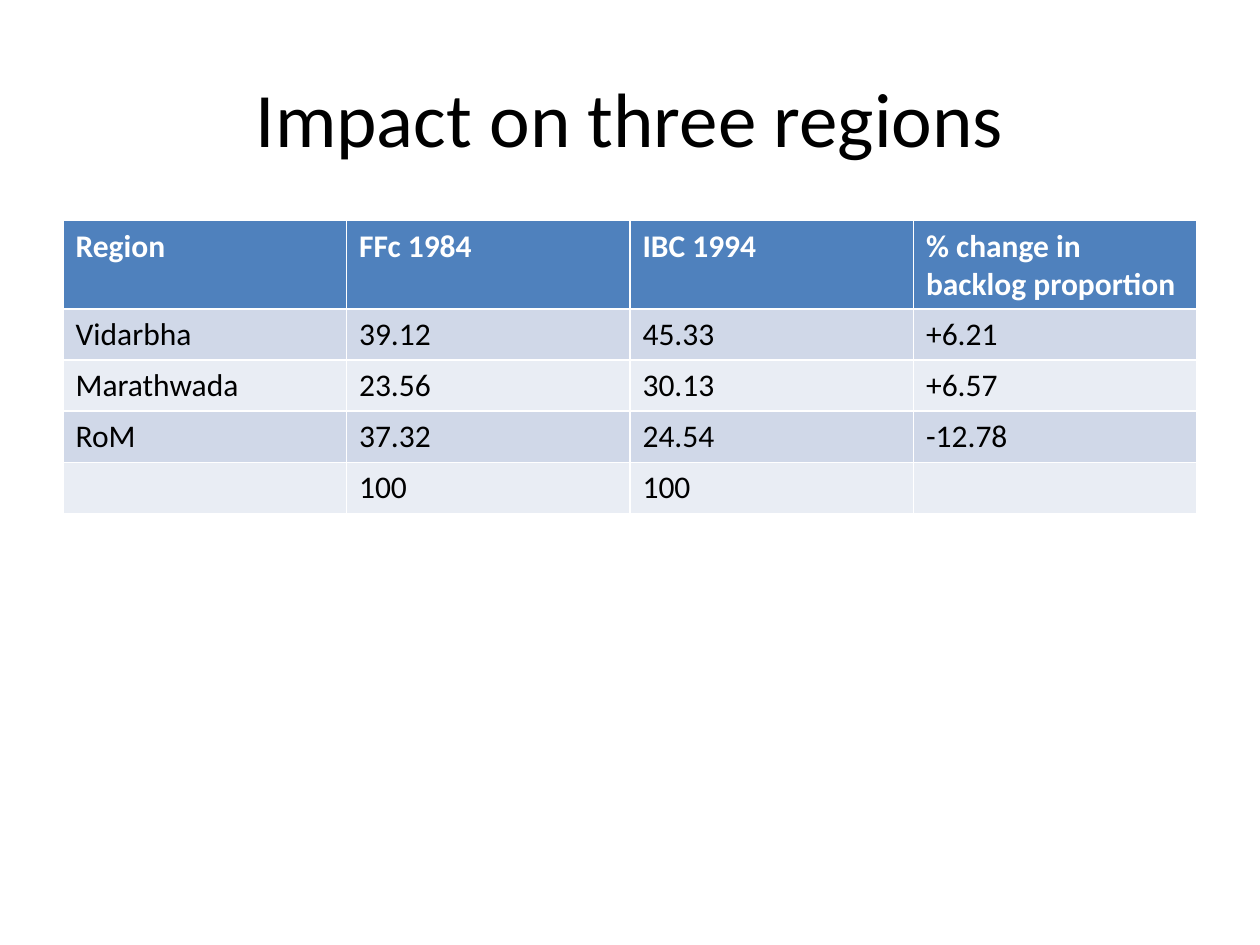
from dataclasses import dataclass

from pptx import Presentation
from pptx.dml.color import RGBColor
from pptx.enum.text import MSO_ANCHOR, PP_ALIGN
from pptx.util import Cm, Pt


@dataclass(frozen=True)
class Theme:
    font: str = "Calibri"
    title_size: int = 44
    table_size: int = 18
    text: str = "000000"
    header_text: str = "FFFFFF"
    header_fill: str = "4F81BD"
    bands: tuple = ("D0D8E8", "E9EDF4")


theme = Theme()


def add_run(paragraph, text, size, color, bold=False):
    run = paragraph.add_run()
    run.text = text
    run.font.name = theme.font
    run.font.size = Pt(size)
    run.font.bold = bold
    run.font.color.rgb = RGBColor.from_string(color)


presentation = Presentation()
presentation.slide_width = Cm(25.4)
presentation.slide_height = Cm(19.05)
slide = presentation.slides.add_slide(presentation.slide_layouts[6])

left, width = Cm(1.27), Cm(22.86)

# Title
title = slide.shapes.add_textbox(left, Cm(0.76), width, Cm(3.18))
title.text_frame.word_wrap = True
title.text_frame.vertical_anchor = MSO_ANCHOR.MIDDLE
paragraph = title.text_frame.paragraphs[0]
paragraph.alignment = PP_ALIGN.CENTER
add_run(paragraph, "Impact on three regions", theme.title_size, theme.text)

# Backlog table: the default table style supplies the white cell borders
rows = [
    ("Region", "FFc 1984", "IBC 1994", "% change in backlog proportion"),
    ("Vidarbha", "39.12", "45.33", "+6.21"),
    ("Marathwada", "23.56", "30.13", "+6.57"),
    ("RoM", "37.32", "24.54", "-12.78"),
    ("", "100", "100", ""),
]
row_height = Cm(1.03)
table = slide.shapes.add_table(
    len(rows), len(rows[0]), left, Cm(4.45), width, row_height * len(rows)
).table

for row_index, row in enumerate(rows):
    is_header = row_index == 0
    fill = theme.header_fill if is_header else theme.bands[(row_index - 1) % 2]
    color = theme.header_text if is_header else theme.text
    for column_index, text in enumerate(row):
        cell = table.cell(row_index, column_index)
        cell.fill.solid()
        cell.fill.fore_color.rgb = RGBColor.from_string(fill)
        if text:
            add_run(cell.text_frame.paragraphs[0], text, theme.table_size, color, is_header)

presentation.save("out.pptx")
